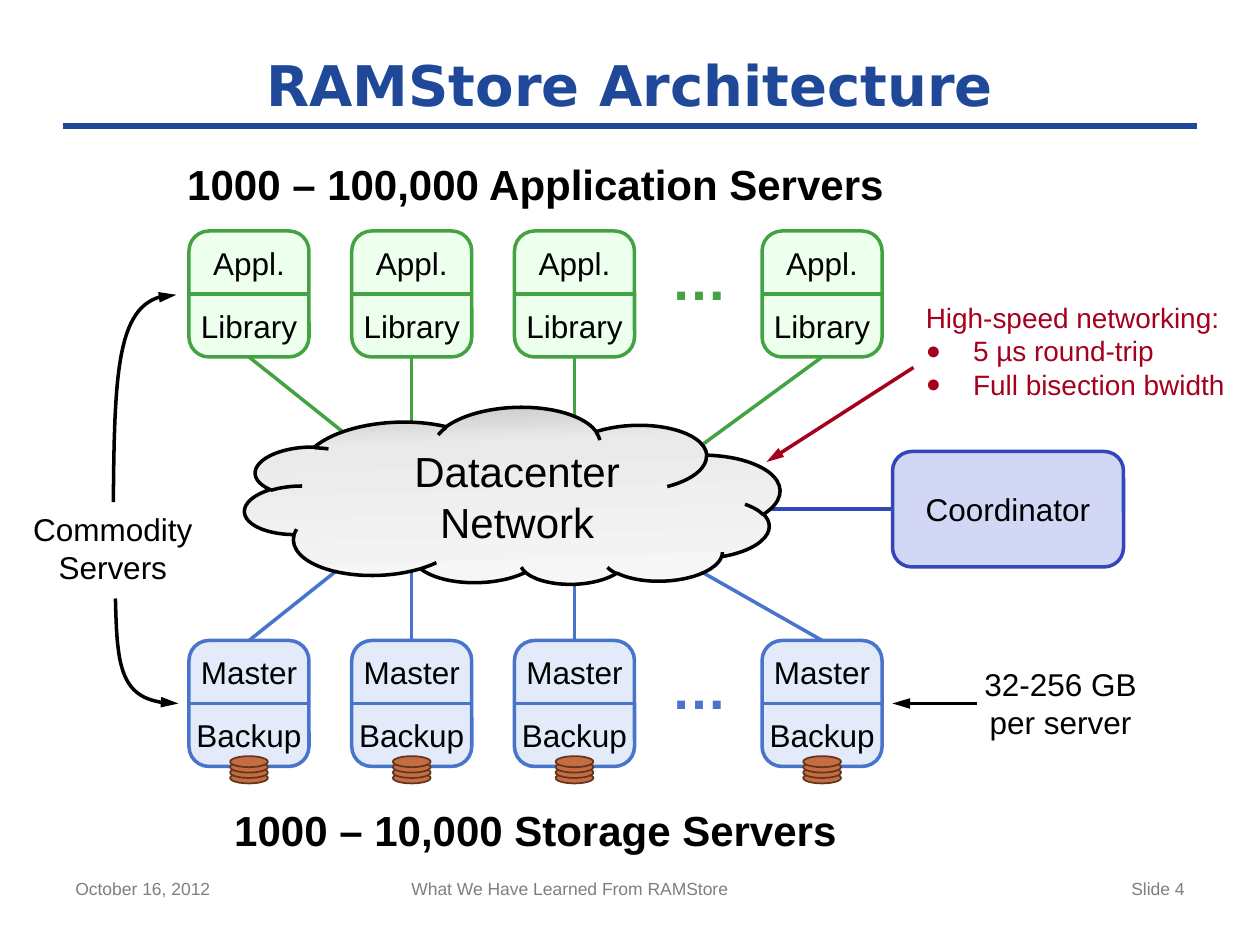
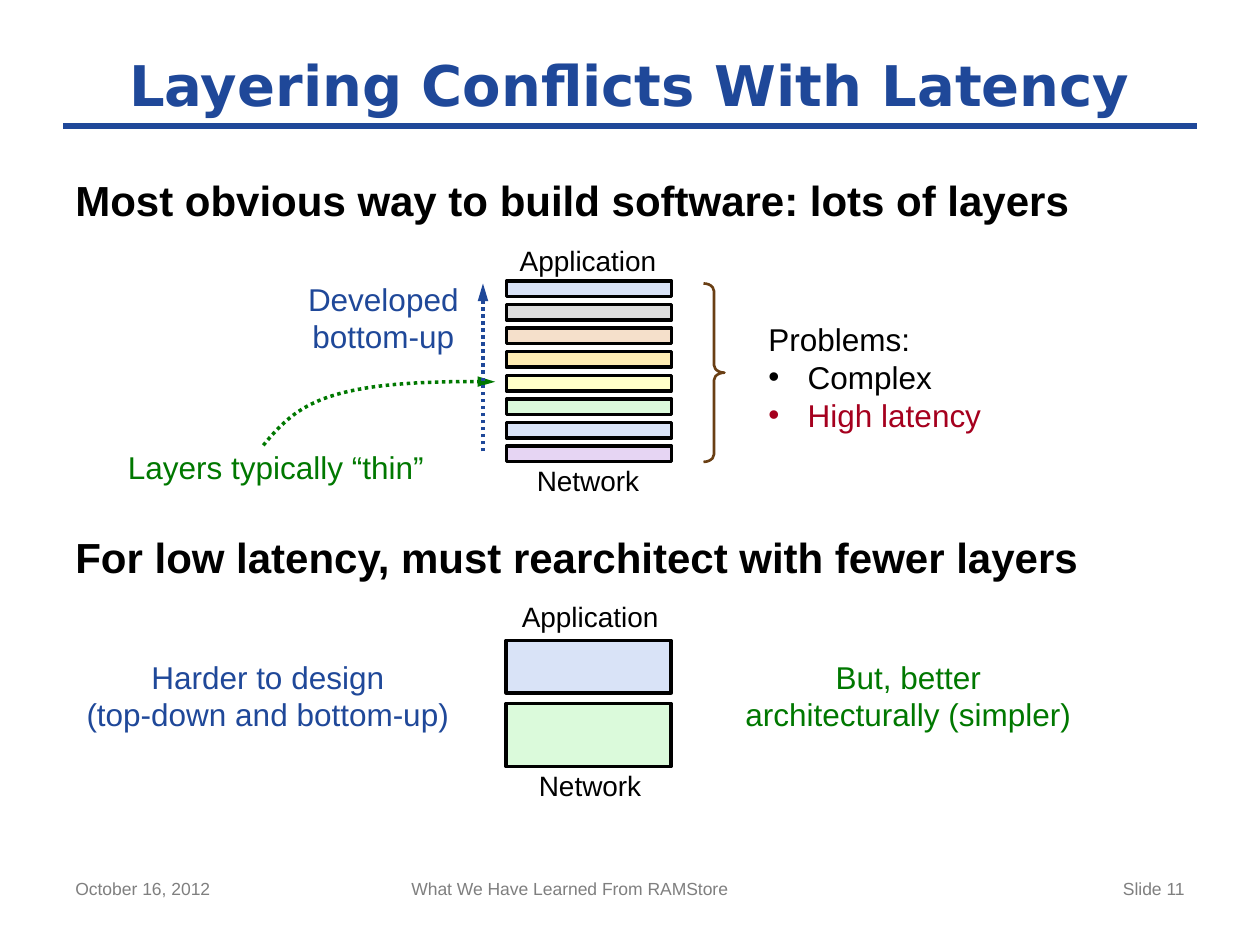
from copy import deepcopy

from lxml import etree
from pptx import Presentation
from pptx import util as u
from pptx.dml import color
from pptx.enum import dml, shapes, text
from pptx.oxml import ns

NAVY, BLACK, GRAY = "1F4899", "000000", "7F7F7F"
GREEN, RED, COORDINATOR = "007800", "A5001E", "3447B8"
SKY, MINT = "D9E3F7", "DBFADB"
APP = {"outline": "43A343", "tint": "EDFFED"}
STORAGE = {"outline": "4974CB", "tint": "E3EAF9"}
LEFT, CENTER, RIGHT = text.PP_ALIGN.LEFT, text.PP_ALIGN.CENTER, text.PP_ALIGN.RIGHT
TOP, MIDDLE = text.MSO_ANCHOR.TOP, text.MSO_ANCHOR.MIDDLE
ROUNDED = shapes.MSO_SHAPE.ROUNDED_RECTANGLE
RECTANGLE = shapes.MSO_SHAPE.RECTANGLE
SERVER_LEFTS = (108, 201, 294, 435.5)
SERVER_WIDTH, SERVER_HEIGHT = 68.6, 72
APP_TOP, STORAGE_TOP = 132, 366


def rgb(hex_color):
    return color.RGBColor.from_string(hex_color)


def points(values):
    return [u.Pt(value) for value in values]


def apply_format(target, formats):
    for name, value in formats.items():
        setattr(target, name, value)


def add_xml(parent, tag, **attributes):
    return etree.SubElement(parent, ns.qn(tag), attributes)


def style_line(line, outline, width, dotted=False, arrow=False):
    line.color.rgb = rgb(outline)
    line.width = u.Pt(width)
    if dotted:
        line.dash_style = dml.MSO_LINE.ROUND_DOT
    if arrow:
        add_xml(line._get_or_add_ln(), "a:tailEnd", type="triangle", w="med", len="lg")


def add_bullet(paragraph, symbol, indent, hex_color, percent):
    properties = paragraph._p.get_or_add_pPr()
    properties.set("marL", str(u.Pt(indent)))
    properties.set("indent", str(-u.Pt(indent)))
    add_xml(add_xml(properties, "a:buClr"), "a:srgbClr", val=hex_color)
    add_xml(properties, "a:buSzPct", val=str(percent * 1000))
    add_xml(properties, "a:buFont", typeface="Arial")
    add_xml(properties, "a:buChar", char=symbol)


def write(frame, lines, size, hex_color=BLACK, align=CENTER, anchor=TOP,
          bold=False, font="Arial", inset=True, bullet=None):
    side, edge = (7.2, 3.6) if inset else (0, 0)
    apply_format(frame, {
        "word_wrap": True, "vertical_anchor": anchor,
        "margin_left": u.Pt(side), "margin_right": u.Pt(side),
        "margin_top": u.Pt(edge), "margin_bottom": u.Pt(edge),
    })
    for index, line in enumerate(lines):
        wording, line_color = line if isinstance(line, tuple) else (line, hex_color)
        paragraph = frame.add_paragraph() if index else frame.paragraphs[0]
        apply_format(paragraph, {"text": wording, "alignment": align})
        if bullet and index:
            symbol, indent, percent = bullet
            add_bullet(paragraph, symbol, indent, line_color, percent)
        for run in paragraph.runs:
            apply_format(run.font, {"size": u.Pt(size), "bold": bold, "name": font})
            run.font.color.rgb = rgb(line_color)


def add_label(slide, box, *lines, **formats):
    write(slide.shapes.add_textbox(*points(box)).text_frame, lines, **formats)


def add_block(slide, kind, box, fill, outline, width=2):
    block = slide.shapes.add_shape(kind, *points(box))
    block.shadow.inherit = False
    if fill:
        block.fill.solid()
        block.fill.fore_color.rgb = rgb(fill)
    else:
        block.fill.background()
    style_line(block.line, outline, width)
    return block


def add_link(slide, start, end, outline, width=2, **formats):
    link = slide.shapes.add_connector(shapes.MSO_CONNECTOR.STRAIGHT, *points((*start, *end)))
    style_line(link.line, outline, width, **formats)
    add_xml(link._element.spPr, "a:effectLst")


def add_curved_arrow(slide, controls, outline, dotted=False, steps=32):
    def curve_point(t):
        weights = ((1 - t) ** 3, 3 * t * (1 - t) ** 2, 3 * t ** 2 * (1 - t), t ** 3)
        return tuple(u.Pt(sum(w * c[axis] for w, c in zip(weights, controls)))
                     for axis in (0, 1))

    route = [curve_point(step / steps) for step in range(steps + 1)]
    builder = slide.shapes.build_freeform(*route[0])
    builder.add_line_segments(route[1:], close=False)
    arrow = builder.convert_to_shape()
    arrow.shadow.inherit = False
    arrow.fill.background()
    style_line(arrow.line, outline, 2, dotted, arrow=True)


def add_server(slide, left, top, upper, lower, palette, disks=False):
    add_block(slide, ROUNDED, (left, top, SERVER_WIDTH, SERVER_HEIGHT),
              palette["tint"], palette["outline"])
    for offset, role in ((7.2, upper), (43.2, lower)):
        add_label(slide, (left, top + offset, SERVER_WIDTH, 21.6), role, size=18, inset=False)
    middle = top + SERVER_HEIGHT / 2
    add_link(slide, (left, middle), (left + SERVER_WIDTH, middle), palette["outline"])
    if disks:
        for level in range(4):
            add_block(slide, shapes.MSO_SHAPE.OVAL,
                      (left + 23.5, top + 75.4 - 3.1 * level, 21.6, 6.3),
                      "C56D41", "64351E", 1)


def add_server_row(slide, top, upper, lower, palette, disks=False):
    for left in SERVER_LEFTS:
        add_server(slide, left, top, upper, lower, palette, disks)
    add_label(slide, (376.5, top + 4, 46.8, 46), "…", size=32,
              hex_color=palette["outline"], bold=True)


def add_network_links(slide, edge, cloud_ends, palette):
    for left, cloud_end in zip(SERVER_LEFTS, cloud_ends):
        add_link(slide, (left + SERVER_WIDTH / 2, edge), cloud_end, palette["outline"])


def add_cloud(slide):
    cloud = add_block(slide, shapes.MSO_SHAPE.CLOUD, (139.7, 233.3, 306, 102.2), "EAEAEA", BLACK)
    cloud.rotation = 358
    cloud._element.spPr.find(ns.qn("a:xfrm")).set("flipV", "1")
    cloud.fill.gradient()
    cloud.fill.gradient_angle = 270
    stops = cloud._element.spPr.find(ns.qn("a:gradFill")).find(ns.qn("a:gsLst"))
    stops.append(deepcopy(stops[0]))
    shades = ((0, "F8F8F8"), (0.76, "EAEAEA"), (1, "C0C0C0"))
    for stop, (position, shade) in zip(cloud.fill.gradient_stops, shades):
        stop.position = position
        stop.color.rgb = rgb(shade)
    add_label(slide, (214.5, 251.3, 162, 65.5), "Datacenter\nNetwork", size=24)


def add_stack(slide, left, top, layers, gap, label_tops):
    for height, tint in layers:
        add_block(slide, RECTANGLE, (left, top, 94.3, height), tint, BLACK)
        top += height + gap
    for (label_left, label_top), end in zip(label_tops, ("Application", "Network")):
        add_label(slide, (label_left, label_top, 96, 26.6), end, size=16)


def start_slide(deck, title, number):
    slide = deck.slides.add_slide(deck.slide_layouts[6])
    add_link(slide, (36, 72), (684, 72), NAVY, 4)
    add_label(slide, (36, 24, 648, 48), title, size=32, hex_color=NAVY,
              anchor=MIDDLE, bold=True, font="DejaVu Sans")
    footers = ((36, 168, "October 16, 2012", LEFT),
               (228, 270, "What We Have Learned From RAMStore", LEFT),
               (516, 168, f"Slide {number}", RIGHT))
    for left, width, wording, align in footers:
        add_label(slide, (left, 498, width, 31), wording, size=10, hex_color=GRAY, align=align)
    return slide


def build_architecture(deck):
    slide = start_slide(deck, "RAMStore Architecture", 4)
    add_link(slide, (510, 291), (433, 291), COORDINATOR)
    add_network_links(slide, STORAGE_TOP,
                      ((195, 324), (235.3, 324), (328.3, 330), (396, 324)), STORAGE)
    add_network_links(slide, APP_TOP + SERVER_HEIGHT,
                      ((201.6, 251.3), (235.3, 246), (328.3, 246), (396, 258)), APP)
    add_server_row(slide, STORAGE_TOP, "Master", "Backup", STORAGE, disks=True)
    add_server_row(slide, APP_TOP, "Appl.", "Library", APP)
    add_cloud(slide)

    coordinator = add_block(slide, ROUNDED, (510, 258, 132, 66), "D2D7F6", COORDINATOR)
    write(coordinator.text_frame, ["Coordinator"], 18, anchor=MIDDLE)
    add_label(slide, (108, 456, 396, 36), "1000 – 10,000 Storage Servers", size=24, bold=True)
    add_label(slide, (86, 87, 440, 36), "1000 – 100,000 Application Servers", size=24, bold=True)

    add_label(slide, (8, 288, 113, 51), "Commodity\nServers", size=18)
    add_curved_arrow(slide, ((64.8, 287), (65.5, 207.4), (67, 168.5), (100.8, 168.5)), BLACK)
    add_curved_arrow(slide, ((66, 342), (67, 382.3), (68.4, 402), (102, 402)), BLACK)
    add_label(slide, (551, 376.5, 110, 51), "32-256 GB\nper server", size=18)
    add_link(slide, (558, 402), (510, 402), BLACK, arrow=True)
    add_link(slide, (522, 210), (438, 264), RED, arrow=True)
    add_label(slide, (522, 168, 196, 72), "High-speed networking:", "5 µs round-trip",
              "Full bisection bwidth", size=16, hex_color=RED, align=LEFT,
              bullet=("●", 27, 90))


def build_layering(deck):
    slide = start_slide(deck, "Layering Conflicts With Latency", 11)
    headings = ((96, "Most obvious way to build software: lots of layers"),
                (300, "For low latency, must rearchitect with fewer layers"))
    for top, heading in headings:
        add_label(slide, (36, top, 648, 36), heading, size=24, align=LEFT, bold=True)

    thin_tints = (SKY, "DDDDDD", "F5E0CB", "FFEDB3", "FFFFC9", MINT, SKY, "E6D5F3")
    add_stack(slide, 289.4, 160.6, [(8.9, tint) for tint in thin_tints], 4.57,
              ((288, 135.4), (288, 261.4)))
    add_stack(slide, 289.2, 366, ((30, SKY), (36, MINT)), 6, ((289.2, 339.2), (289.2, 435.4)))

    remarks = ((164, 156.2, 110, "Developed\nbottom-up", NAVY),
               (36, 372.2, 234, "Harder to design\n(top-down and bottom-up)", NAVY),
               (413, 372.2, 212, "But, better\narchitecturally (simpler)", GREEN))
    for left, top, width, remark, tone in remarks:
        add_label(slide, (left, top, width, 51), remark, size=18, hex_color=tone)
    add_label(slide, (66, 252.7, 195, 29), "Layers typically “thin”", size=18,
              hex_color=GREEN, align=LEFT)
    add_curved_arrow(slide, ((150.5, 254.5), (170.6, 230.4), (186.5, 216.7), (283, 218.2)),
                     GREEN, dotted=True)
    add_link(slide, (276, 258), (276, 162), NAVY, dotted=True, arrow=True)

    brace = add_block(slide, shapes.MSO_SHAPE.RIGHT_BRACE, (402, 162, 12, 102), None, "6A3F14", 1.5)
    brace.adjustments[0] = 0.36
    add_label(slide, (432, 179.3, 160, 73), "Problems:", "Complex", ("High latency", RED),
              size=18, align=LEFT, bullet=("•", 22.5, 100))


def main():
    deck = Presentation()
    apply_format(deck, {"slide_width": u.Pt(720), "slide_height": u.Pt(540)})
    build_architecture(deck)
    build_layering(deck)
    deck.save("out.pptx")


if __name__ == "__main__":
    main()
